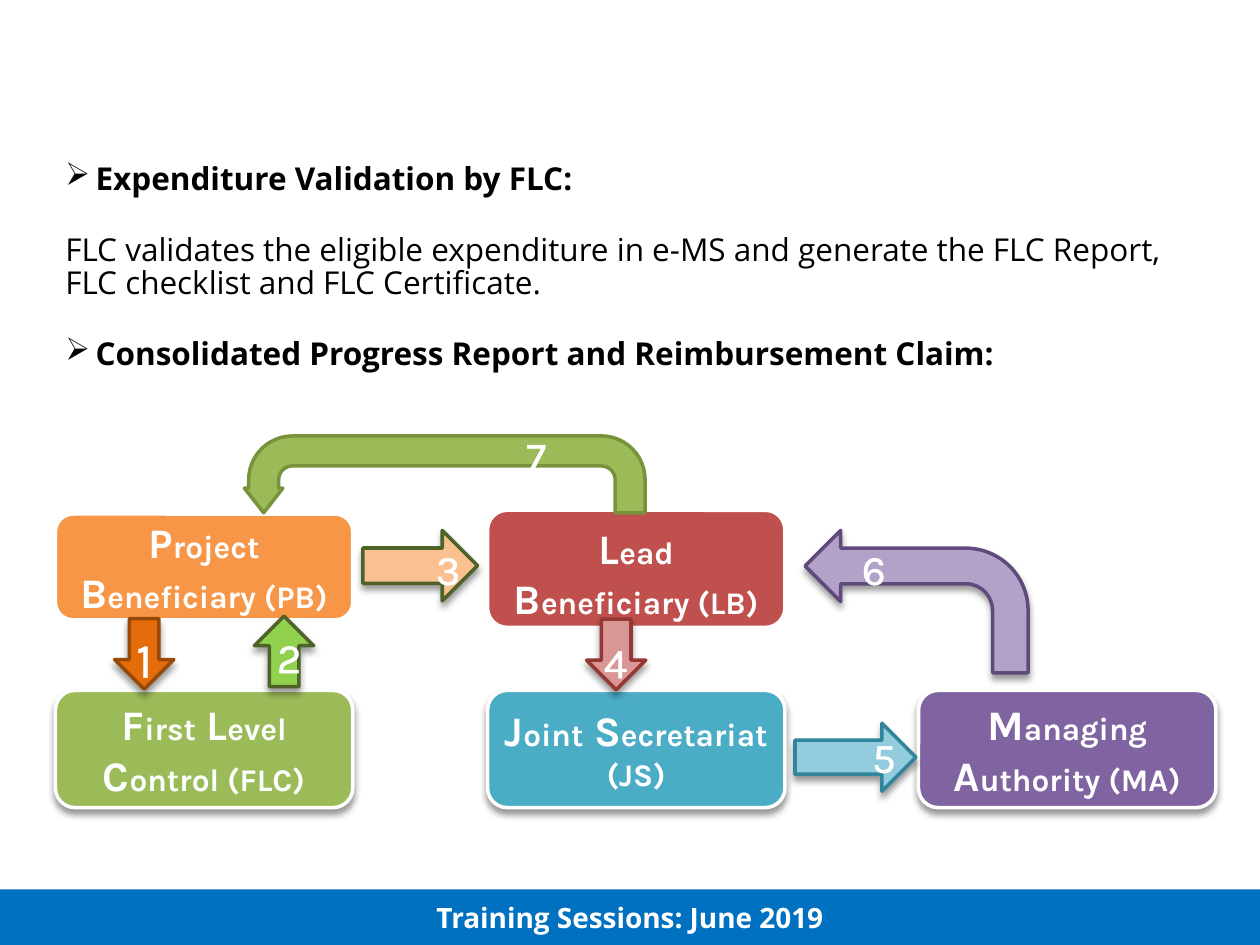
from dataclasses import dataclass

from lxml.etree import SubElement
from pptx import Presentation
from pptx.dml.color import RGBColor
from pptx.enum.shapes import MSO_SHAPE as Preset
from pptx.enum.text import MSO_ANCHOR as Anchor, PP_ALIGN as Align
from pptx.oxml import parse_xml
from pptx.oxml.ns import nsdecls, qn
from pptx.util import Emu, Inches, Pt


@dataclass(frozen=True)
class Theme:
    body_font: str = "Open Sans"
    flow_font: str = "Karla"
    white: str = "FFFFFF"
    black: str = "000000"
    footer: str = "0070C0"
    green: str = "9BBB59"
    orange: str = "F79646"
    red: str = "C0504D"
    teal: str = "4BACC6"
    purple: str = "8064A2"
    footer_size: int = 16
    body_size: int = 18
    small: int = 18
    large: int = 24
    first_step: int = 28
    line: int = 2


@dataclass(frozen=True)
class Actor:
    words: tuple[str, ...]
    left: float
    top: float
    height: float
    fill: str
    shadow: bool = True
    top_anchored: bool = False


@dataclass(frozen=True)
class Arrow:
    preset: Preset
    box: tuple[float, float, float, float]
    fill: str
    line: str
    rotation: int = 0
    flipped: bool = False
    shadow: bool = True
    adjustments: tuple[float, ...] = ()


@dataclass(frozen=True)
class Step:
    number: str
    left: float
    top: float
    size: int


THEME = Theme()
ACTOR_WIDTH = 2.36
COLUMNS = (0.44, 3.87, 7.29)
LOWER_ROW = 5.48

ACTORS = (
    Actor(("First", " Level", " Control (FLC)"), COLUMNS[0], LOWER_ROW, 0.93, THEME.green),
    Actor(("Project", " Beneficiary (PB)"), COLUMNS[0], 4.08, 0.84, THEME.orange, shadow=False),
    Actor(("Joint", " Secretariat (JS)"), COLUMNS[1], LOWER_ROW, 0.93, THEME.teal),
    Actor(("Managing", " Authority (MA)"), COLUMNS[2], LOWER_ROW, 0.93, THEME.purple),
    Actor(("Lead", " Beneficiary (LB)"), COLUMNS[1], 4.05, 0.93, THEME.red, False, True),
)

ARROWS = (
    Arrow(Preset.DOWN_ARROW, (0.91, 4.91, 0.47, 0.56), "E46C0A", "984807"),
    Arrow(Preset.UP_ARROW, (2.02, 4.89, 0.47, 0.56), "92D050", "4F6228"),
    Arrow(Preset.RIGHT_ARROW, (2.88, 4.21, 0.91, 0.56), "FAC090", "4F6228"),
    Arrow(Preset.RIGHT_ARROW, (4.61, 4.96, 0.56, 0.47), "D99694", "953735", rotation=90),
    Arrow(Preset.RIGHT_ARROW, (6.31, 5.74, 0.96, 0.54), "93CDDD", "31859C"),
    Arrow(Preset.U_TURN_ARROW, (1.94, 3.46, 3.18, 0.61), THEME.green, "77933C",
          flipped=True, shadow=False, adjustments=(0.39, 0.25, 0.32, 0.57, 1)),
    Arrow(Preset.BENT_ARROW, (6.39, 4.21, 1.77, 1.13), "B3A2C7", "604A7B", flipped=True),
)

STEPS = (
    Step("1", 0.95, 4.94, THEME.first_step),
    Step("2", 2.1, 4.96, THEME.large),
    Step("3", 3.36, 4.26, THEME.large),
    Step("4", 4.69, 5, THEME.large),
    Step("5", 6.82, 5.75, THEME.large),
    Step("6", 6.74, 4.26, THEME.large),
    Step("7", 4.06, 3.36, THEME.large),
)

PASSAGES = (
    ("Expenditure Validation by FLC:", True),
    ("FLC validates the eligible expenditure in e-MS and generate the FLC Report, "
     "FLC checklist and FLC Certificate.", False),
    ("Consolidated Progress Report and Reimbursement Claim:", True),
)


def style_font(font, name: str, size: int, color: str, bold: bool) -> None:
    """Set the face, size, colour and weight of a font."""
    font.name, font.size, font.bold = name, Pt(size), bold
    font.color.rgb = RGBColor.from_string(color)


def add_preset(slide, preset: Preset, box: tuple, fill: str, line: str | None, shadow: bool):
    """Add a filled preset shape with an optional outline and soft shadow."""
    shape = slide.shapes.add_shape(preset, *map(Inches, box))
    shape.fill.solid()
    shape.fill.fore_color.rgb = RGBColor.from_string(fill)
    if line:
        shape.line.color.rgb = RGBColor.from_string(line)
        shape.line.width = Pt(THEME.line)
    else:
        shape.line.fill.background()
    shape.shadow.inherit = False
    if shadow:
        effects = shape._element.spPr.find(qn("a:effectLst"))
        effects.append(parse_xml(
            f'<a:outerShdw {nsdecls("a")} blurRad="{Pt(4)}" dist="{Pt(3)}" dir="5400000" '
            f'rotWithShape="0"><a:srgbClr val="{THEME.black}"><a:alpha val="40000"/>'
            '</a:srgbClr></a:outerShdw>'))
    return shape


def add_actor(slide, actor: Actor) -> None:
    """Draw an organisation box whose words start with enlarged capitals."""
    box = (actor.left, actor.top, ACTOR_WIDTH, actor.height)
    shape = add_preset(slide, Preset.ROUNDED_RECTANGLE, box, actor.fill, THEME.white, actor.shadow)
    frame = shape.text_frame
    frame.word_wrap = True
    frame.vertical_anchor = Anchor.TOP if actor.top_anchored else Anchor.MIDDLE
    if not actor.top_anchored:
        frame.margin_left = frame.margin_right = frame.margin_top = frame.margin_bottom = Emu(0)
    label = frame.paragraphs[0]
    label.alignment = Align.CENTER
    style_font(label.font, THEME.flow_font, THEME.small, THEME.white, True)
    for word in actor.words:
        split = 2 if word.startswith(" ") else 1
        for part, size in ((word[:split], THEME.large), (word[split:], THEME.small)):
            run = label.add_run()
            run.text = part
            style_font(run.font, THEME.flow_font, size, THEME.white, True)


def add_arrow(slide, arrow: Arrow) -> None:
    """Draw a block arrow between two organisations."""
    shape = add_preset(slide, arrow.preset, arrow.box, arrow.fill, arrow.line, arrow.shadow)
    shape.rotation = arrow.rotation
    for index, value in enumerate(arrow.adjustments):
        shape.adjustments[index] = value
    if arrow.flipped:
        shape._element.spPr.find(qn("a:xfrm")).set("flipH", "1")


def add_step(slide, step: Step) -> None:
    """Write an outlined step number on its arrow."""
    box = slide.shapes.add_textbox(*map(Inches, (step.left, step.top, 0.39, step.size / 50)))
    box.text_frame.word_wrap = True
    digit = box.text_frame.paragraphs[0]
    digit.alignment = Align.CENTER
    run = digit.add_run()
    run.text = step.number
    style_font(digit.font, THEME.flow_font, step.size, THEME.white, False)
    run._r.get_or_add_rPr().insert(0, parse_xml(
        f'<a:ln {nsdecls("a")} w="{Pt(1.45)}"><a:solidFill>'
        f'<a:srgbClr val="{THEME.white}"/></a:solidFill></a:ln>'))


def add_passages(slide) -> None:
    """Write the headed passages above the flow."""
    frame = slide.shapes.add_textbox(*map(Inches, (0.42, 1.25, 8.96, 1.92))).text_frame
    frame.word_wrap = True
    for index, (wording, heading) in enumerate(PASSAGES):
        passage = frame.paragraphs[0] if index == 0 else frame.add_paragraph()
        passage.text = wording
        passage.line_spacing = 0.88
        if index:
            passage.space_before = Pt(21.6)
        if heading:
            properties = passage._p.get_or_add_pPr()
            properties.set("marL", str(Inches(0.24)))
            properties.set("indent", str(-Inches(0.24)))
            SubElement(properties, qn("a:buChar")).set("char", "➢")
        style_font(passage.font, THEME.body_font, THEME.body_size, THEME.black, heading)


def add_footer(slide) -> None:
    """Draw the session band along the bottom edge."""
    band = add_preset(slide, Preset.RECTANGLE, (0, 7.06, 10, 0.44), THEME.footer, None, False)
    band.text_frame.vertical_anchor = Anchor.MIDDLE
    session = band.text_frame.paragraphs[0]
    session.text = "Training Sessions: June 2019"
    session.alignment = Align.CENTER
    style_font(session.font, THEME.body_font, THEME.footer_size, THEME.white, True)


def main() -> None:
    """Build the reporting flow slide and save it."""
    deck = Presentation()
    deck.slide_width, deck.slide_height = Inches(10), Inches(7.5)
    slide = deck.slides.add_slide(deck.slide_layouts[6])
    add_footer(slide)
    for draw, items in ((add_actor, ACTORS), (add_arrow, ARROWS), (add_step, STEPS)):
        for item in items:
            draw(slide, item)
    add_passages(slide)
    deck.save("out.pptx")


if __name__ == "__main__":
    main()
